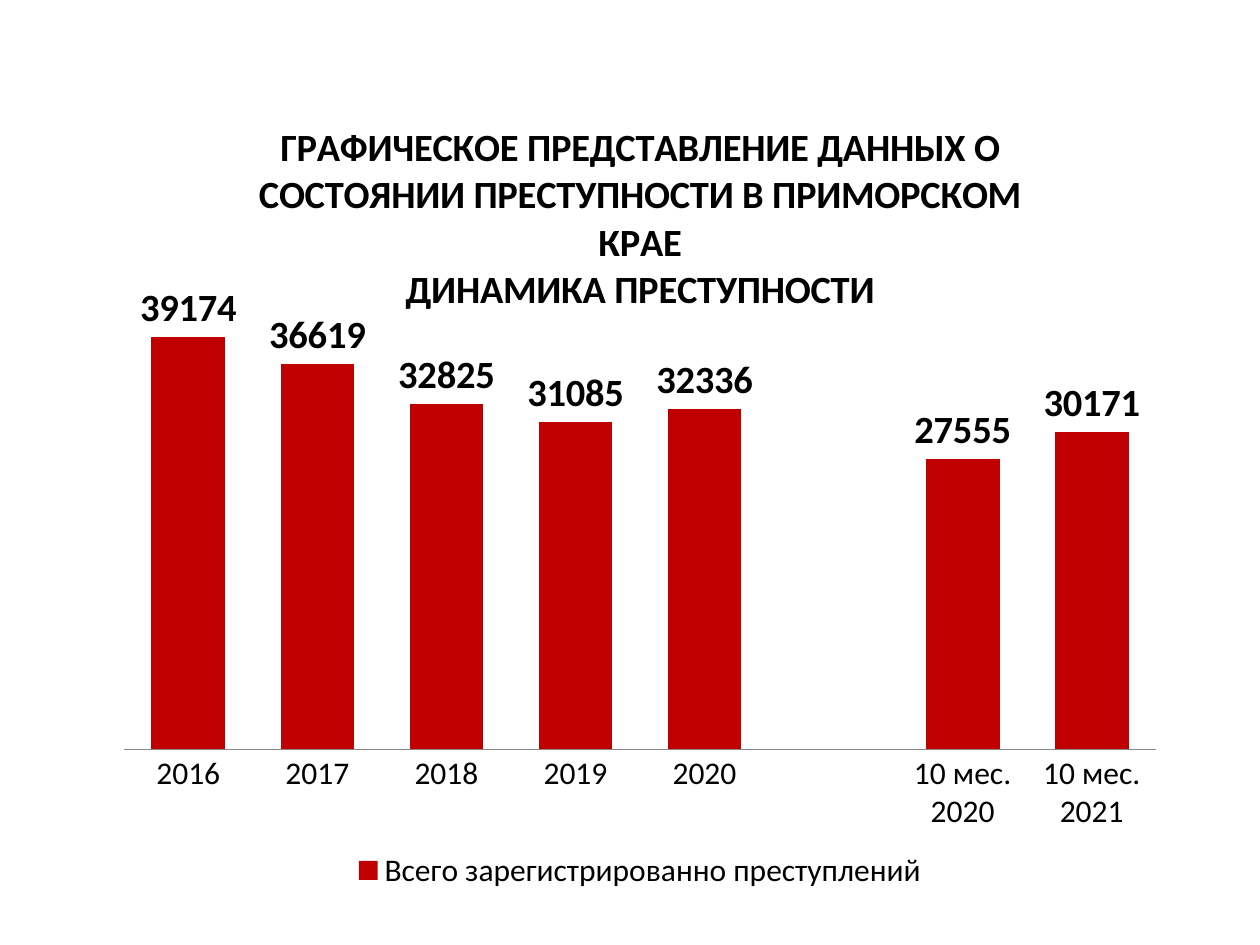
from dataclasses import dataclass

from lxml import etree
from pptx import Presentation, util as u
from pptx.chart.data import CategoryChartData
from pptx.dml.color import RGBColor
from pptx.enum import chart as ch
from pptx.oxml import ns


@dataclass(frozen=True)
class Theme:
    """Colours, font and type sizes of the slide."""
    font: str = "Calibri"
    ink: RGBColor = RGBColor(0, 0, 0)
    bar: RGBColor = RGBColor(0xC0, 0, 0)
    axis: RGBColor = RGBColor(0x86, 0x86, 0x86)
    body: u.Pt = u.Pt(18)
    strong: u.Pt = u.Pt(22)


THEME = Theme()
HEADING = (
    "ГРАФИЧЕСКОЕ ПРЕДСТАВЛЕНИЕ ДАННЫХ О СОСТОЯНИИ ПРЕСТУПНОСТИ В ПРИМОРСКОМ КРАЕ",
    "ДИНАМИКА ПРЕСТУПНОСТИ",
)
CRIMES = {
    "2016": 39174,
    "2017": 36619,
    "2018": 32825,
    "2019": 31085,
    "2020": 32336,
    "": None,
    "10 мес. 2020": 27555,
    "10 мес. 2021": 30171,
}


def style_font(font, size, bold=False):
    """Apply the theme's typeface and ink."""
    font.name, font.size, font.bold = THEME.font, size, bold
    font.color.rgb = THEME.ink


def place_plot(chart, x, y, w, h):
    """Fix the inner plot area as fractions of the chart."""
    plot_area = chart.element.find(".//" + ns.qn("c:plotArea"))
    for old in plot_area.findall(ns.qn("c:layout")):
        plot_area.remove(old)
    layout = etree.Element(ns.qn("c:layout"))
    manual = etree.SubElement(layout, ns.qn("c:manualLayout"))
    settings = {"layoutTarget": "inner", "xMode": "edge", "yMode": "edge",
                "x": x, "y": y, "w": w, "h": h}
    for tag, value in settings.items():
        etree.SubElement(manual, ns.qn("c:" + tag), val=str(value))
    plot_area.insert(0, layout)


def add_heading(chart):
    """Write the chart title, one paragraph per line of the heading."""
    frame = chart.chart_title.text_frame
    for index, line in enumerate(HEADING):
        paragraph = frame.add_paragraph() if index else frame.paragraphs[0]
        run = paragraph.add_run()
        run.text = line
        style_font(run.font, THEME.strong, bold=True)


def style_axes(chart):
    """Show only the category line and its labels."""
    years, counts = chart.category_axis, chart.value_axis
    years.major_tick_mark = ch.XL_TICK_MARK.NONE
    years.format.line.color.rgb = THEME.axis
    years.format.line.width = u.Pt(0.75)
    counts.minimum_scale, counts.maximum_scale = 0, 45000
    counts.has_major_gridlines = False
    counts.visible = False


def style_bars(plot):
    """Colour the bars and put their values above them."""
    plot.gap_width = 75
    plot.vary_by_categories = False
    crimes = plot.series[0]
    crimes.format.fill.solid()
    crimes.format.fill.fore_color.rgb = THEME.bar
    values = crimes.data_labels
    values.show_value = True
    values.position = ch.XL_LABEL_POSITION.OUTSIDE_END
    style_font(values.font, THEME.strong, bold=True)


def add_crime_chart(slide, left, top, width, height):
    """Place the crime chart in the given box."""
    data = CategoryChartData()
    data.categories = list(CRIMES)
    data.add_series("Всего зарегистрированно преступлений", list(CRIMES.values()))
    chart = slide.shapes.add_chart(
        ch.XL_CHART_TYPE.COLUMN_CLUSTERED, left, top, width, height, data).chart
    style_font(chart.font, THEME.body)
    add_heading(chart)
    style_axes(chart)
    style_bars(chart.plots[0])
    chart.has_legend = True
    chart.legend.position = ch.XL_LEGEND_POSITION.BOTTOM
    chart.legend.include_in_layout = False
    place_plot(chart, 0.018, 0.225, 0.964, 0.592)


def main():
    """Build the slide and save it."""
    deck = Presentation()
    deck.slide_width, deck.slide_height = u.Inches(10), u.Inches(7.5)
    slide = deck.slides.add_slide(deck.slide_layouts[6])
    add_crime_chart(slide, u.Inches(0.83), u.Inches(0.76), u.Inches(8.5), u.Inches(6.35))
    deck.save("out.pptx")


if __name__ == "__main__":
    main()
